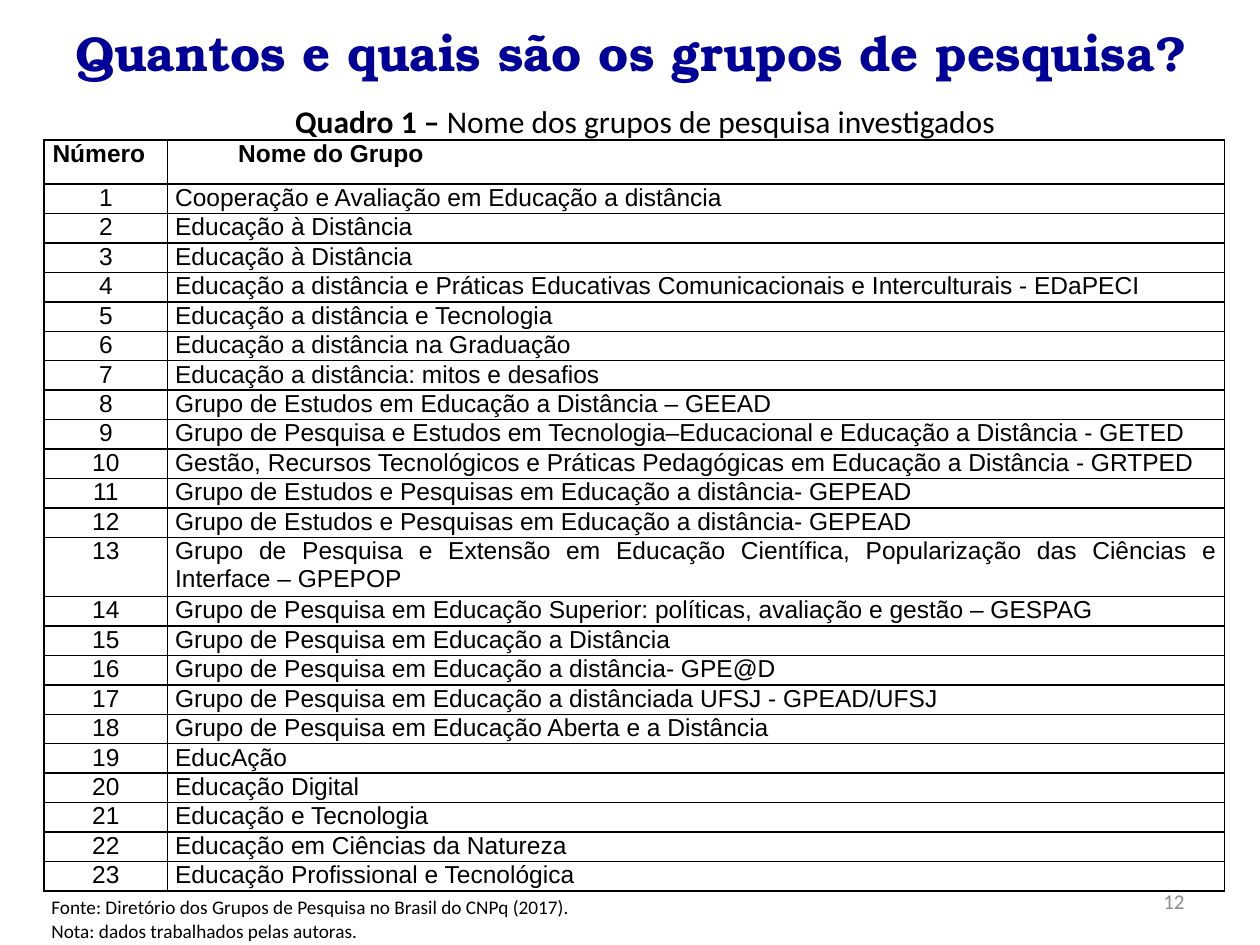
import pptx
import pptx.dml.color
import pptx.enum.text
import pptx.oxml
import pptx.oxml.ns
import pptx.util

ALIGN = pptx.enum.text.PP_ALIGN
ANCHOR = pptx.enum.text.MSO_ANCHOR

GROUPS = [
    "Cooperação e Avaliação em Educação a distância",
    "Educação à Distância",
    "Educação à Distância",
    "Educação a distância e Práticas Educativas Comunicacionais e Interculturais - EDaPECI",
    "Educação a distância e Tecnologia",
    "Educação a distância na Graduação",
    "Educação a distância: mitos e desafios",
    "Grupo de Estudos em Educação a Distância – GEEAD",
    "Grupo de Pesquisa e Estudos em Tecnologia–Educacional e Educação a Distância - GETED",
    "Gestão, Recursos Tecnológicos e Práticas Pedagógicas em Educação a Distância - GRTPED",
    "Grupo de Estudos e Pesquisas em Educação a distância- GEPEAD",
    "Grupo de Estudos e Pesquisas em Educação a distância- GEPEAD",
    "Grupo de Pesquisa e Extensão em Educação Científica, Popularização das Ciências e "
    "Interface – GPEPOP",
    "Grupo de Pesquisa em Educação Superior: políticas, avaliação e gestão – GESPAG",
    "Grupo de Pesquisa em Educação a Distância",
    "Grupo de Pesquisa em Educação a distância- GPE@D",
    "Grupo de Pesquisa em Educação a distânciada UFSJ - GPEAD/UFSJ",
    "Grupo de Pesquisa em Educação Aberta e a Distância",
    "EducAção",
    "Educação Digital",
    "Educação e Tecnologia",
    "Educação em Ciências da Natureza",
    "Educação Profissional e Tecnológica",
]
TWO_LINE_GROUP = 13


def rgb(value):
    return pptx.dml.color.RGBColor.from_string(value)


class Deck:
    """Style and current slide; lengths are units of a 100 x 75 grid."""

    unit = pptx.util.Inches(0.1)
    black, navy, grey = "000000", "000099", "8C8C8C"
    body, table_font, title = "Calibri", "Arial", "TeX Gyre Bonum"
    cell_margin = 0.6

    def __init__(self):
        self.prs = pptx.Presentation()
        self.prs.slide_width = self.grid(100)
        self.prs.slide_height = self.grid(75)
        self.s = self.prs.slides.add_slide(self.prs.slide_layouts[6])

    def grid(self, n):
        return pptx.util.Emu(round(n * self.unit))

    def run(self, p, text, size, font=body, color=black, bold=False):
        r = p.add_run()
        r.text = text
        r.font.size = pptx.util.Pt(size)
        r.font.name = font
        r.font.bold = bold
        r.font.color.rgb = rgb(color)

    def indent(self, p, left=0, first=0):
        pPr = p._p.get_or_add_pPr()
        pPr.set("marL", str(self.grid(left)))
        pPr.set("indent", str(self.grid(first)))

    def text(self, box, align=ALIGN.LEFT, anchor=ANCHOR.TOP):
        """Add a text box and return its first paragraph."""
        tf = self.s.shapes.add_textbox(*map(self.grid, box)).text_frame
        tf.word_wrap = True
        tf.vertical_anchor = anchor
        p = tf.paragraphs[0]
        p.alignment = align
        return p

    def table(self, left, top, widths, heights):
        sp = self.s.shapes.add_table(
            len(heights), len(widths),
            *map(self.grid, (left, top, sum(widths), sum(heights))))
        table = sp.table
        table.first_row = table.horz_banding = False
        for column, width in zip(table.columns, widths):
            column.width = self.grid(width)
        for row, height in zip(table.rows, heights):
            row.height = self.grid(height)
        return table

    def cell(self, cell, text, align, bold=False):
        cell.margin_left = cell.margin_right = self.grid(self.cell_margin)
        cell.margin_top = cell.margin_bottom = 0
        cell.fill.background()
        self.borders(cell)
        p = cell.text_frame.paragraphs[0]
        p.alignment = align
        self.run(p, text, 14, self.table_font, bold=bold)
        return p

    def borders(self, cell):
        tcPr = cell._tc.get_or_add_tcPr()
        for i, side in enumerate(("lnL", "lnR", "lnT", "lnB")):
            tcPr.insert(i, pptx.oxml.parse_xml(
                f'<a:{side} {pptx.oxml.ns.nsdecls("a")} w="{pptx.util.Pt(1)}">'
                f'<a:solidFill><a:srgbClr val="{self.black}"/></a:solidFill></a:{side}>'))


def main():
    deck = Deck()

    p = deck.text((0, 1.3, 100, 5.7))
    deck.indent(p, left=5)
    deck.run(p, "Quantos e quais são os grupos de pesquisa?", 28,
             deck.title, deck.navy, bold=True)

    header, line = 3.5, 56 / (len(GROUPS) + 1)
    heights = [header] + [line * (2 if n == TWO_LINE_GROUP else 1)
                          for n in range(1, len(GROUPS) + 1)]
    table = deck.table(3.5, 11.1, (9.8, 83.9), heights)

    number, name = table.cell(0, 0), table.cell(0, 1)
    heads = [deck.cell(number, "Número", ALIGN.CENTER, bold=True),
             deck.cell(name, "Nome do Grupo", ALIGN.JUSTIFY, bold=True)]
    number.margin_right = deck.grid(1.7)
    deck.indent(heads[1], first=5)
    for p in heads:
        p.space_before = p.space_after = pptx.util.Pt(3)

    for n, group in enumerate(GROUPS, 1):
        deck.cell(table.cell(n, 0), str(n), ALIGN.CENTER)
        deck.cell(table.cell(n, 1), group, ALIGN.JUSTIFY)

    p = deck.text((3.1, 70.6, 47.6, 4.7))
    deck.run(p, "Fonte: Diretório dos Grupos de Pesquisa no Brasil do CNPq (2017).", 11)
    p.add_line_break()
    deck.run(p, "Nota: dados trabalhados pelas autoras.", 11)

    p = deck.text((13.8, 7.6, 74.8, 4), ALIGN.CENTER)
    deck.run(p, "Quadro 1 – ", 18, bold=True)
    deck.run(p, "Nome dos grupos de pesquisa investigados", 18)

    p = deck.text((71.7, 69.5, 23.3, 4), ALIGN.RIGHT, ANCHOR.MIDDLE)
    deck.run(p, "12", 12, color=deck.grey)

    deck.prs.save("out.pptx")


if __name__ == "__main__":
    main()
